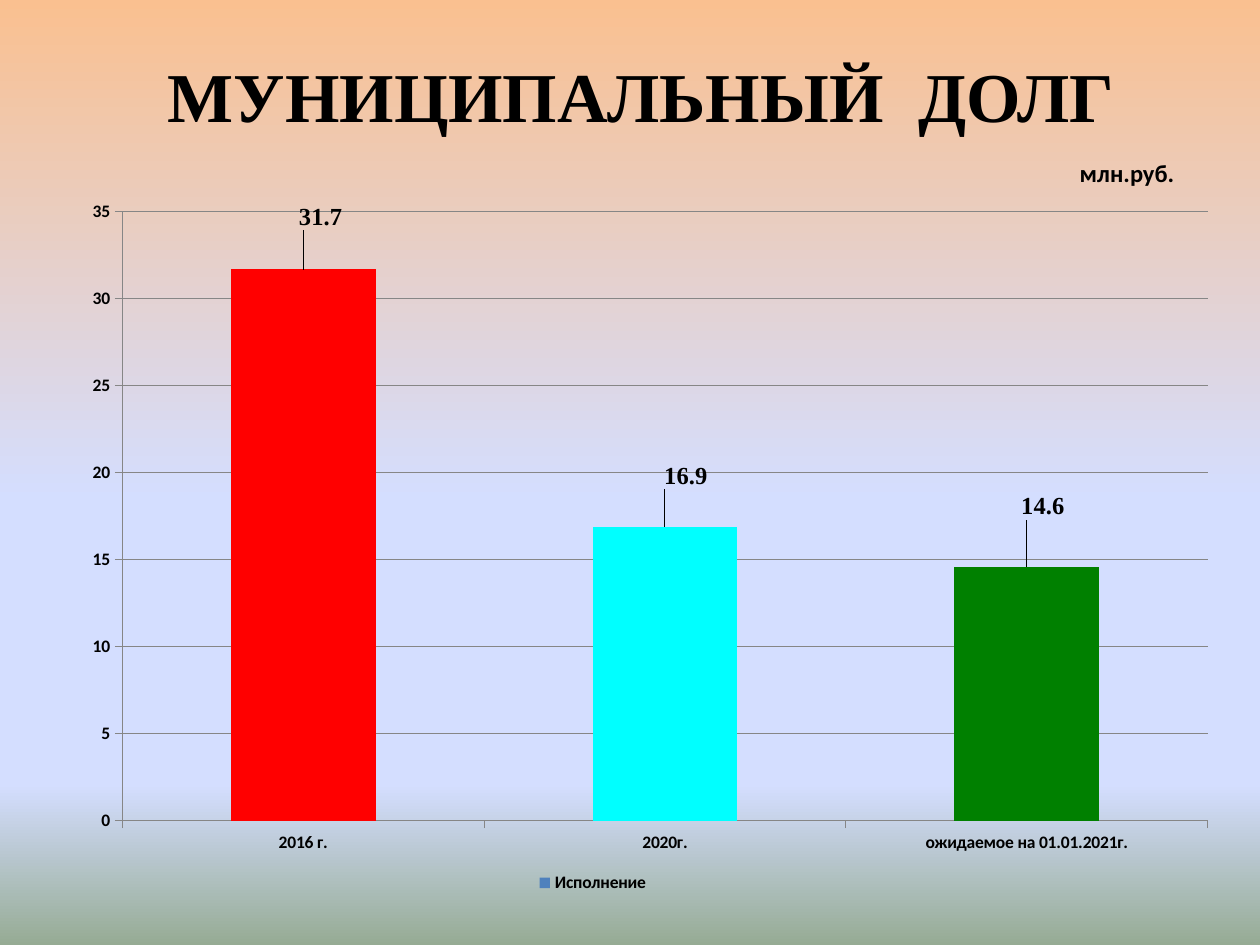
from lxml.etree import SubElement
from pptx import Presentation
from pptx.chart.data import CategoryChartData
from pptx.dml.color import RGBColor
from pptx.enum.chart import XL_CHART_TYPE as ChartType
from pptx.enum.chart import XL_LABEL_POSITION as LabelPosition
from pptx.enum.chart import XL_LEGEND_POSITION as LegendPosition
from pptx.enum.chart import XL_TICK_MARK as TickMark
from pptx.enum.text import MSO_ANCHOR as Anchor
from pptx.enum.text import PP_ALIGN as Align
from pptx.oxml.ns import qn
from pptx.util import Emu, Pt

PX_PER_INCH = 126
BLACK = "000000"
GREY = "868686"
SERIF = "Times New Roman"
SANS = "Calibri"
BACKGROUND_STOPS = [(0, "FAC090"), (53, "D4DEFF"), (83, "D4DEFF"), (100, "96AB94")]

# Category, value, bar colour, label shift as a share of the chart
DEBT = [
    ("2016 г.", 31.7, "FF0000", (0.015, -0.047)),
    ("2020г.", 16.9, "00FFFF", (0.018, -0.045)),
    ("ожидаемое на 01.01.2021г.", 14.6, "008000", (0.014, -0.058)),
]


def px(length):
    return Emu(round(length * 914400 / PX_PER_INCH))


def color(hex_code):
    return RGBColor.from_string(hex_code)


def style_font(font, name, size):
    font.name, font.size, font.bold = name, Pt(size), True
    font.color.rgb = color(BLACK)


def set_background(slide):
    fill = slide.background.fill
    fill.gradient()
    fill.gradient_angle = 270
    stop_list = slide.element.find(".//" + qn("a:gsLst"))
    for stop in list(stop_list):
        stop_list.remove(stop)
    for percent, hex_code in BACKGROUND_STOPS:
        stop = SubElement(stop_list, qn("a:gs"), pos=str(percent * 1000))
        SubElement(stop, qn("a:srgbClr"), val=hex_code)


def write_text(shape, box, text, name, size, anchor):
    shape.left, shape.top, shape.width, shape.height = map(px, box)
    frame = shape.text_frame
    frame.word_wrap = True
    frame.vertical_anchor = anchor
    paragraph = frame.paragraphs[0]
    paragraph.text = text
    paragraph.alignment = Align.CENTER
    style_font(paragraph.font, name, size)
    return frame


def set_layout(element, index, **values):
    """Place a chart part by hand; the layout goes in at the given child index."""
    for old_layout in element.findall(qn("c:layout")):
        element.remove(old_layout)
    layout = SubElement(element, qn("c:layout"))
    element.insert(index, layout)
    manual = SubElement(layout, qn("c:manualLayout"))
    for tag, value in values.items():
        SubElement(manual, qn("c:" + tag), val=str(value))


def style_axis(axis):
    axis.major_tick_mark = TickMark.OUTSIDE
    axis.minor_tick_mark = TickMark.NONE
    axis.format.line.color.rgb = color(GREY)
    style_font(axis.tick_labels.font, SANS, 10)


def add_debt_chart(slide, box):
    data = CategoryChartData()
    data.categories = [row[0] for row in DEBT]
    data.add_series("Исполнение", [row[1] for row in DEBT])
    chart = slide.shapes.add_chart(
        ChartType.COLUMN_CLUSTERED, *map(px, box), data).chart
    chart.has_title = False
    style_font(chart.font, SANS, 10)

    # Axes
    style_axis(chart.category_axis)
    value_axis = chart.value_axis
    style_axis(value_axis)
    value_axis.minimum_scale, value_axis.maximum_scale = 0, 35
    value_axis.major_unit = 5
    value_axis.has_major_gridlines = True
    value_axis.major_gridlines.format.line.color.rgb = color(GREY)

    # Bars and their labels
    plot = chart.plots[0]
    plot.gap_width = 150
    plot.vary_by_categories = False
    series = plot.series[0]
    series.format.fill.solid()
    series.format.fill.fore_color.rgb = color("4F81BD")
    for index, (_, _, bar_color, _) in enumerate(DEBT):
        point = series.points[index]
        point.format.fill.solid()
        point.format.fill.fore_color.rgb = color(bar_color)
        style_font(point.data_label.font, SERIF, 14)
        point.data_label.position = LabelPosition.OUTSIDE_END
    labels = chart.element.findall(".//" + qn("c:dLbl"))
    for label, (_, _, _, (shift_x, shift_y)) in zip(labels, DEBT):
        set_layout(label, 1, x=shift_x, y=shift_y)

    # Legend and plot area
    chart.has_legend = True
    chart.legend.position = LegendPosition.BOTTOM
    chart.legend.include_in_layout = False
    style_font(chart.legend.font, SANS, 10)
    set_layout(chart.element.find(".//" + qn("c:legend")), 1,
               xMode="edge", yMode="edge", x=0.4, y=0.95)
    set_layout(chart.element.find(".//" + qn("c:plotArea")), 0,
               layoutTarget="inner", xMode="edge", yMode="edge",
               x=0.046, y=0.036, w=0.934, h=0.848)


def main():
    presentation = Presentation()
    presentation.slide_width, presentation.slide_height = px(1260), px(945)
    slide = presentation.slides.add_slide(presentation.slide_layouts[5])
    set_background(slide)

    # Title
    title = write_text(slide.shapes.title, (69, 39, 1144, 158),
                       "МУНИЦИПАЛЬНЫЙ  ДОЛГ", SERIF, 40, Anchor.TOP)
    title.margin_top = px(14)

    # Chart with its unit
    add_debt_chart(slide, (69, 186, 1162, 718))
    unit_box = (1043, 158, 168, 29)
    unit = slide.shapes.add_textbox(*map(px, unit_box))
    write_text(unit, unit_box, "млн.руб.", SANS, 14, Anchor.MIDDLE)

    presentation.save("out.pptx")


if __name__ == "__main__":
    main()
